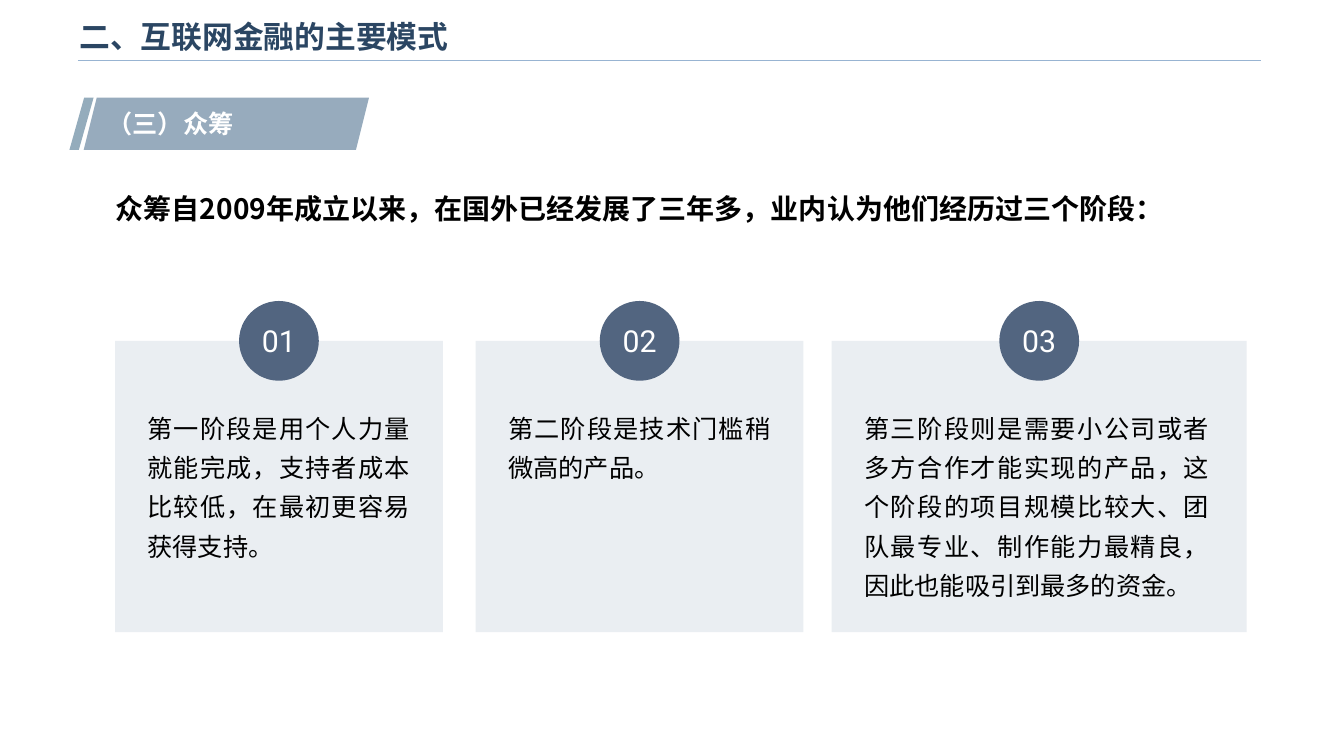
from lxml import etree
from pptx import Presentation
from pptx.dml.color import RGBColor
from pptx.enum import shapes, text
from pptx.oxml import ns
from pptx.util import Cm, Pt

COLORS = {
    "title": "2B4663", "rule": "98B4D2", "stripe": "94ACBC", "banner": "97ABBD",
    "card": "EAEEF2", "badge": "526580", "white": "FFFFFF", "black": "000000",
}
CJK = "Noto Sans CJK SC"
STAGES = [
    (2.9, 8.26, 7.11, "第一阶段是用个人力量就能完成，支持者成本比较低，在最初更容易获得支持。"),
    (11.99, 8.26, 7.11, "第二阶段是技术门槛稍微高的产品。"),
    (20.96, 10.46, 9.2, "第三阶段则是需要小公司或者多方合作才能实现的产品，这个阶段的项目规模比较大、"
                        "团队最专业、制作能力最精良，因此也能吸引到最多的资金。"),
]


def rgb(name):
    return RGBColor.from_string(COLORS[name])


def write(tf, words, size, color, bold=False, font=CJK, align=text.PP_ALIGN.LEFT, spacing=None):
    tf.text = words
    tf.word_wrap = True
    p = tf.paragraphs[0]
    p.alignment = align
    if spacing:
        p.line_spacing = spacing
    r = p.runs[0]
    r.font.size = Pt(size)
    r.font.bold = bold
    r.font.color.rgb = rgb(color)
    r.font.name = font
    ea = etree.SubElement(r.font._element, ns.qn("a:ea"))
    ea.set("typeface", CJK)


def add_text(s, x, y, w, h, *args, **kwargs):
    tf = s.shapes.add_textbox(Cm(x), Cm(y), Cm(w), Cm(h)).text_frame
    write(tf, *args, **kwargs)


def add_filled(s, kind, x, y, w, h, color):
    sp = s.shapes.add_shape(kind, Cm(x), Cm(y), Cm(w), Cm(h))
    sp.shadow.inherit = False
    sp.fill.solid()
    sp.fill.fore_color.rgb = rgb(color)
    sp.line.fill.background()
    return sp


def add_heading(s, x, y, w, h):
    rule = s.shapes.add_connector(
        shapes.MSO_CONNECTOR.STRAIGHT, Cm(x + 0.21), Cm(y + 1.3), Cm(x + 30.03), Cm(y + 1.3))
    rule.line.color.rgb = rgb("rule")
    rule.line.width = Pt(1)
    etree.SubElement(rule._element.spPr, ns.qn("a:effectLst"))
    title = s.shapes.title
    title.left, title.top, title.width, title.height = Cm(x), Cm(y), Cm(w), Cm(h)
    tf = title.text_frame
    tf.auto_size = text.MSO_AUTO_SIZE.NONE
    tf.vertical_anchor = text.MSO_ANCHOR.MIDDLE
    write(tf, "二、互联网金融的主要模式", 22, "title", bold=True, font="Arial")


def add_banner(s, x, y, w, h):
    kind = shapes.MSO_SHAPE.PARALLELOGRAM
    stripe = add_filled(s, kind, x, y, 0.61, h, "stripe")
    stripe.adjustments[0] = 0.61
    body = add_filled(s, kind, x + 0.36, y, w - 0.36, h, "banner")
    body.adjustments[0] = 0.25
    add_text(s, x + 0.71, y + 0.15, w - 1.23, 1.02, "（三）众筹", 18, "white", bold=True)


def add_stage(s, x, y, w, h, number, words, text_width):
    add_filled(s, shapes.MSO_SHAPE.RECTANGLE, x, y, w, h, "card")
    d = 2.01
    badge = add_filled(s, shapes.MSO_SHAPE.OVAL, x + (w - d) / 2, y - d / 2, d, d, "badge")
    tf = badge.text_frame
    tf.vertical_anchor = text.MSO_ANCHOR.MIDDLE
    write(tf, f"{number:02}", 21.6, "white", font="Roboto", align=text.PP_ALIGN.CENTER)
    add_text(s, x + 0.57, y + 1.47, text_width, h - 2, words, 18, "black",
             align=text.PP_ALIGN.JUSTIFY, spacing=1.3)


def main():
    prs = Presentation()
    prs.slide_width, prs.slide_height = Cm(33.87), Cm(19.05)
    s = prs.slides.add_slide(prs.slide_layouts[5])
    add_heading(s, 1.75, 0.23, 27.2, 1.35)
    add_banner(s, 1.75, 2.46, 7.55, 1.32)
    add_text(s, 2.67, 4.45, 27.64, 1.37,
             "众筹自2009年成立以来，在国外已经发展了三年多，业内认为他们经历过三个阶段：",
             20, "black", bold=True, spacing=1.3)
    for number, (x, w, text_width, words) in enumerate(STAGES, 1):
        add_stage(s, x, 8.59, w, 7.34, number, words, text_width)
    prs.save("out.pptx")


if __name__ == "__main__":
    main()
